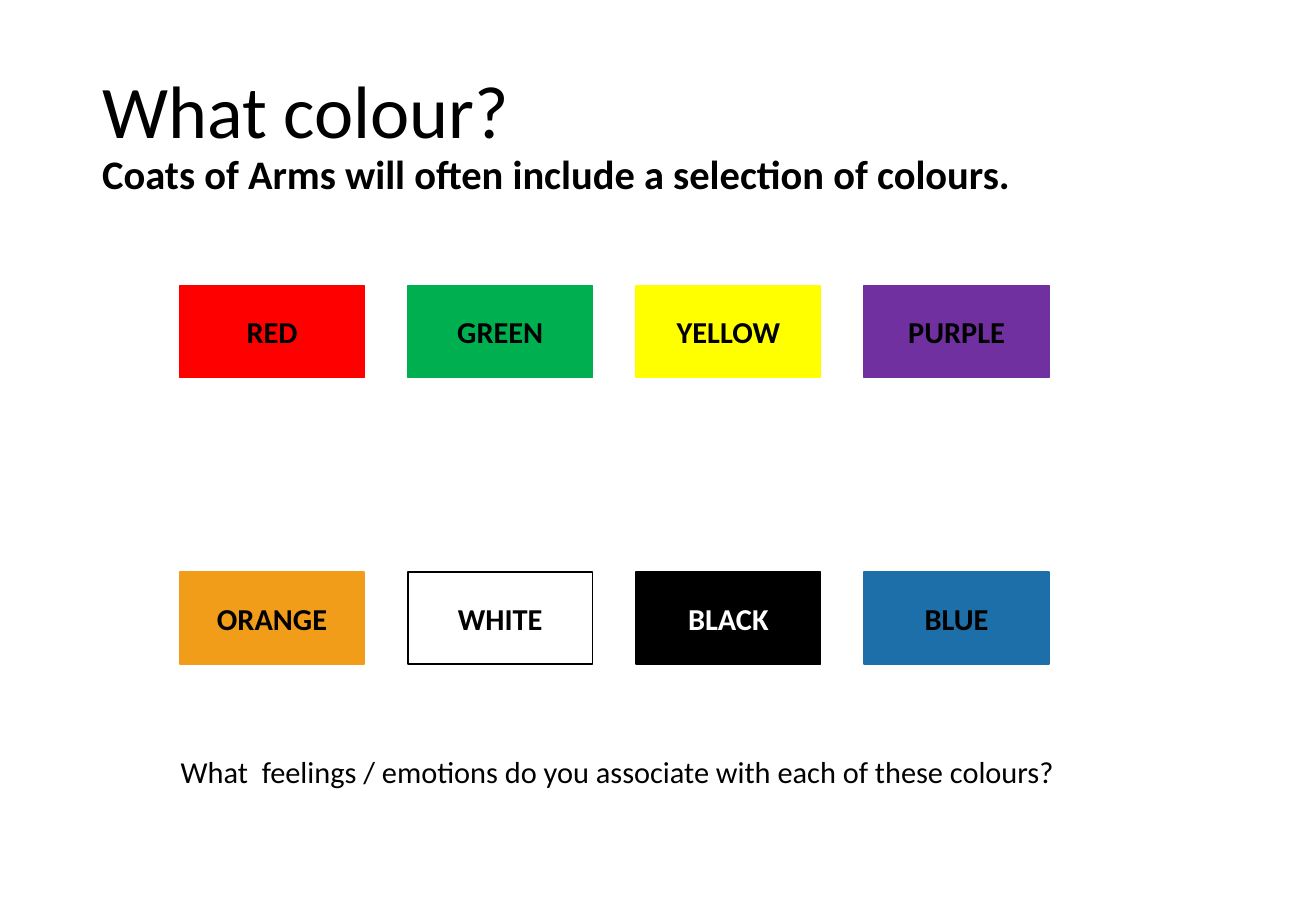
from pptx import Presentation
from pptx.dml.color import RGBColor
from pptx.enum.shapes import MSO_SHAPE
from pptx.enum.text import MSO_ANCHOR, PP_ALIGN
from pptx.util import Pt

RECT = MSO_SHAPE.RECTANGLE
MIDDLE = MSO_ANCHOR.MIDDLE
CENTER = PP_ALIGN.CENTER

FONT = "Calibri"
BLACK, WHITE = "000000", "FFFFFF"
LEFT, PITCH = 106.5, 135.2
WIDTH, HEIGHT = 109.4, 54.7

# Each row: top, then (name, fill, line, text colour) from left to right.
ROWS = [
    (169.2, [
        ("RED", "FF0000", "FF0000", BLACK),
        ("GREEN", "00B050", "00B050", BLACK),
        ("YELLOW", "FFFF00", "FFFF00", BLACK),
        ("PURPLE", "7030A0", "7030A0", BLACK),
    ]),
    (339.1, [
        ("ORANGE", "F19D19", "F19D19", BLACK),
        ("WHITE", None, BLACK, BLACK),
        ("BLACK", BLACK, BLACK, WHITE),
        ("BLUE", "1D6FA9", "1D6FA9", BLACK),
    ]),
]


def paint(target, color):
    target.rgb = RGBColor.from_string(color)


def add_run(para, text, size, bold=False, color=BLACK):
    run = para.add_run()
    run.text = text
    run.font.name = FONT
    run.font.size = Pt(size)
    run.font.bold = bold
    paint(run.font.color, color)


def add_box(slide, left, top, width, height, wrap=True):
    """Add a text box and return its text frame."""
    box = slide.shapes.add_textbox(Pt(left), Pt(top), Pt(width), Pt(height))
    box.text_frame.word_wrap = wrap
    return box.text_frame


def add_title(slide):
    frame = add_box(slide, 53.5, 28.8, 672.5, 104.4)
    frame.vertical_anchor = MIDDLE
    para = frame.paragraphs[0]
    para.line_spacing = 0.9
    add_run(para, "What colour?", 44)
    para.add_line_break()
    add_run(para, "Coats of Arms will often include a selection of colours.",
            24, True)


def add_swatch(slide, left, top, name, fill, line, color):
    """Add a rectangle of one colour with its name in the middle."""
    shape = slide.shapes.add_shape(RECT, Pt(left), Pt(top),
                                   Pt(WIDTH), Pt(HEIGHT))
    shape.shadow.inherit = False
    if fill:
        shape.fill.solid()
        paint(shape.fill.fore_color, fill)
    else:
        shape.fill.background()
    paint(shape.line.color, line)
    shape.line.width = Pt(1)
    frame = shape.text_frame
    frame.vertical_anchor = MIDDLE
    para = frame.paragraphs[0]
    para.alignment = CENTER
    add_run(para, name, 18, True, color)


def add_question(slide):
    frame = add_box(slide, 100, 442.8, 534.2, 28.8, wrap=False)
    add_run(frame.paragraphs[0], "What  feelings / emotions do you associate "
            "with each of these colours?", 18)


def main():
    deck = Presentation()
    deck.slide_width, deck.slide_height = Pt(779.76), Pt(540)
    slide = deck.slides.add_slide(deck.slide_layouts[6])
    add_title(slide)
    for top, row in ROWS:
        for col, swatch in enumerate(row):
            add_swatch(slide, LEFT + col * PITCH, top, *swatch)
    add_question(slide)
    deck.save("out.pptx")


if __name__ == "__main__":
    main()
